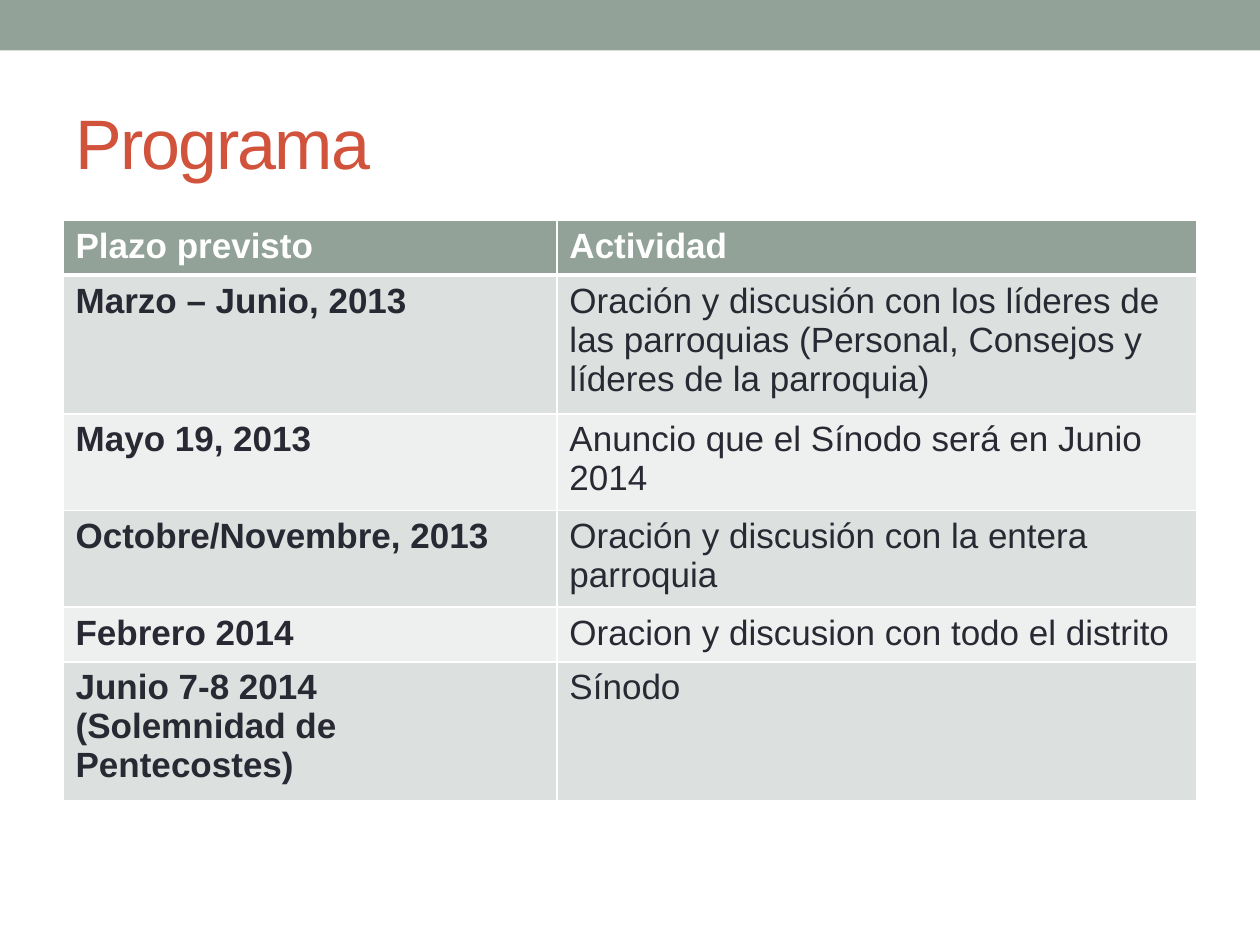
"""Build the synod programme slide with its timetable."""
from dataclasses import dataclass

from lxml.etree import SubElement
from pptx import Presentation
from pptx.dml.color import RGBColor
from pptx.enum.shapes import MSO_SHAPE as Shape
from pptx.enum.text import MSO_ANCHOR as Anchor
from pptx.oxml.ns import qn
from pptx.util import Inches, Pt

TITLE = "Programa"
HEADER = ("Plazo previsto", "Actividad")
SCHEDULE = [
    ("Marzo – Junio, 2013",
     "Oración y discusión con los líderes de las parroquias "
     "(Personal, Consejos y líderes de la parroquia)"),
    ("Mayo 19, 2013", "Anuncio que el Sínodo será en Junio 2014"),
    ("Octobre/Novembre, 2013", "Oración y discusión con la entera parroquia"),
    ("Febrero 2014", "Oracion y discusion con todo el distrito"),
    ("Junio 7-8 2014\n(Solemnidad de Pentecostes)", "Sínodo"),
]


@dataclass(frozen=True)
class Theme:
    font: str = "Arial"
    title_size: int = 40
    table_size: int = 20
    accent: str = "93A299"
    title: str = "D2533C"
    text: str = "292934"
    white: str = "FFFFFF"
    bands: tuple = ("DCE0DE", "EEF0EF")


THEME = Theme()
WIDTH, HEIGHT = Inches(10), Inches(7.5)
MARGIN = int(WIDTH * 0.05)
CONTENT_WIDTH = WIDTH - 2 * MARGIN
COLUMNS = (Inches(3.92), CONTENT_WIDTH - Inches(3.92))
ROW_HEIGHT = Inches(0.41)


def paint(target, color):
    target.fill.solid()
    target.fill.fore_color.rgb = RGBColor.from_string(color)


def write(frame, text, size, color, bold=False):
    frame.text = text
    for paragraph in frame.paragraphs:
        font = paragraph.font
        font.name, font.size, font.bold = THEME.font, Pt(size), bold
        font.color.rgb = RGBColor.from_string(color)


def set_borders(cell, bottom_width):
    properties = cell._tc.get_or_add_tcPr()
    widths = {"a:lnL": 1, "a:lnR": 1, "a:lnT": 1, "a:lnB": bottom_width}
    for position, (tag, width) in enumerate(widths.items()):
        line = SubElement(properties, qn(tag), w=str(Pt(width)))
        fill = SubElement(line, qn("a:solidFill"))
        SubElement(fill, qn("a:srgbClr"), val=THEME.white)
        properties.insert(position, line)


def add_band(slide):
    band = slide.shapes.add_shape(Shape.RECTANGLE, 0, 0, WIDTH, Inches(0.4))
    band.shadow.inherit = False
    paint(band, THEME.accent)
    band.line.fill.background()


def add_title(slide):
    box = slide.shapes.add_textbox(MARGIN, Inches(0.58), CONTENT_WIDTH, Inches(1.08))
    frame = box.text_frame
    frame.word_wrap = True
    frame.vertical_anchor = Anchor.MIDDLE
    write(frame, TITLE, THEME.title_size, THEME.title)
    frame.paragraphs[0].runs[0].font._element.set("spc", "-100")


def add_schedule(slide):
    rows = [HEADER, *SCHEDULE]
    table = slide.shapes.add_table(
        len(rows), len(COLUMNS), MARGIN, Inches(1.75),
        CONTENT_WIDTH, ROW_HEIGHT * len(rows)).table
    for column, width in zip(table.columns, COLUMNS):
        column.width = width
    for row_index, texts in enumerate(rows):
        is_header = row_index == 0
        fill = THEME.accent if is_header else THEME.bands[(row_index - 1) % 2]
        color = THEME.white if is_header else THEME.text
        for column_index, text in enumerate(texts):
            cell = table.cell(row_index, column_index)
            write(cell.text_frame, text, THEME.table_size, color,
                  bold=is_header or column_index == 0)
            paint(cell, fill)
            set_borders(cell, bottom_width=3 if is_header else 1)


def main():
    presentation = Presentation()
    presentation.slide_width, presentation.slide_height = WIDTH, HEIGHT
    slide = presentation.slides.add_slide(presentation.slide_layouts[6])
    paint(slide.background, THEME.white)
    add_band(slide)
    add_title(slide)
    add_schedule(slide)
    presentation.save("out.pptx")


if __name__ == "__main__":
    main()
